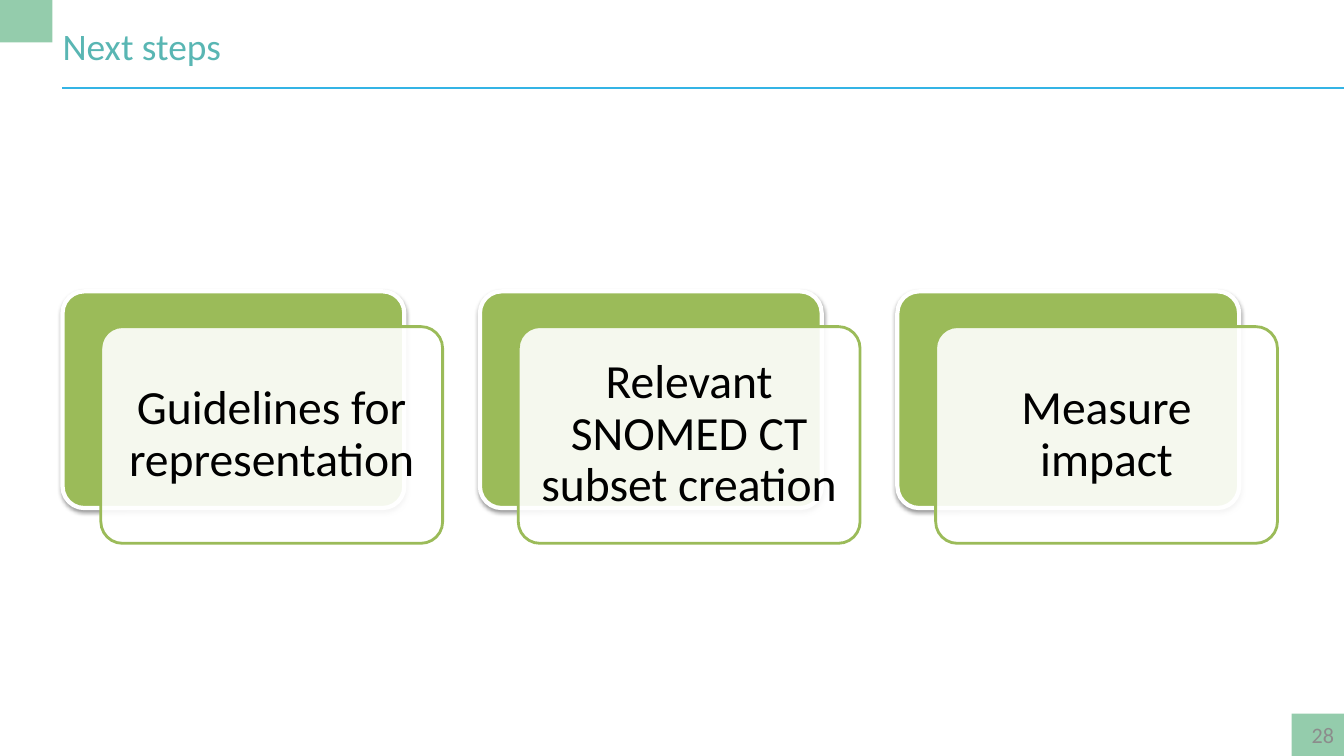
from lxml import etree
from pptx import Presentation
from pptx.dml.color import RGBColor
from pptx.enum import shapes, text
from pptx.oxml.ns import qn
from pptx.util import Inches, Pt

# Content
TITLE = "Next steps"
PAGE = "28"
STEPS = [
    "Guidelines for representation",
    "Relevant SNOMED CT subset creation",
    "Measure impact",
]
COLORS = {"mint": "94CCAC", "teal": "59B6B3", "rule": "34B4E5", "green": "9BBB59",
          "white": "FFFFFF", "black": "000000", "gray": "8C8C8C"}
FONT = "Calibri"

# Layout in inches
SLIDE_W, SLIDE_H = 13.33, 7.5
CORNER_W, CORNER_H = 0.52, 0.42
LEFT, TOP, PITCH = 0.62, 2.89, 4.14
CARD_W, CARD_H = 3.39, 2.15
SHIFT_X, SHIFT_Y = 0.38, 0.35

prs = Presentation()
prs.slide_width, prs.slide_height = Inches(SLIDE_W), Inches(SLIDE_H)
s = prs.slides.add_slide(prs.slide_layouts[5])


def color(name):
    return RGBColor.from_string(COLORS[name])


def add_box(kind, x, y, w, h, fill, line=None, width=0):
    sp = s.shapes.add_shape(kind, Inches(x), Inches(y), Inches(w), Inches(h))
    sp.fill.solid()
    sp.fill.fore_color.rgb = color(fill)
    if line:
        sp.adjustments[0] = 0.1
        sp.line.color.rgb = color(line)
        sp.line.width = Pt(width)
    else:
        sp.line.fill.background()
    sp.shadow.inherit = False
    return sp


def write(sp, words, size, ink, align, anchor, inset):
    tf = sp.text_frame
    frame = {"word_wrap": True, "auto_size": text.MSO_AUTO_SIZE.NONE, "vertical_anchor": anchor}
    for side in ("left", "right", "top", "bottom"):
        frame["margin_" + side] = Inches(inset)
    for name, value in frame.items():
        setattr(tf, name, value)
    p = tf.paragraphs[0]
    p.alignment = align
    r = p.add_run()
    r.text = words
    for name, value in {"name": FONT, "size": Pt(size), "bold": False}.items():
        setattr(r.font, name, value)
    r.font.color.rgb = color(ink)
    return p


# Corner blocks
for x, y in [(0, 0), (SLIDE_W - CORNER_W, SLIDE_H - CORNER_H)]:
    add_box(shapes.MSO_SHAPE.RECTANGLE, x, y, CORNER_W, CORNER_H, "mint")

# Title and rule
title = s.shapes.title
title.left, title.top, title.width, title.height = map(Inches, (LEFT, 0.23, 11.81, 0.45))
write(title, TITLE, 26.7, "teal", text.PP_ALIGN.LEFT, text.MSO_ANCHOR.TOP, 0)
rule = s.shapes.add_connector(shapes.MSO_CONNECTOR.STRAIGHT, Inches(LEFT), Inches(0.87),
                              Inches(SLIDE_W), Inches(0.87))
rule.line.color.rgb = color("rule")
rule.line.width = Pt(1.42)
etree.SubElement(rule._element.spPr, qn("a:effectLst"))

# Page number
number = s.shapes.add_textbox(Inches(12.5), Inches(7.09), Inches(0.83), Inches(0.4))
write(number, PAGE, 15.8, "gray", text.PP_ALIGN.RIGHT, text.MSO_ANCHOR.MIDDLE, 0.1)

# Step cards: a shadowed green back and a translucent front with the text
for i, step in enumerate(STEPS):
    x = LEFT + i * PITCH
    back = add_box(shapes.MSO_SHAPE.ROUNDED_RECTANGLE, x, TOP, CARD_W, CARD_H,
                   "green", "white", 3)
    effects = back._element.spPr.find(qn("a:effectLst"))
    shadow = etree.SubElement(effects, qn("a:outerShdw"), blurRad=str(Pt(3.1)),
                              dist=str(Pt(1.6)), dir="5400000", rotWithShape="0")
    ink = etree.SubElement(shadow, qn("a:srgbClr"), val=COLORS["black"])
    etree.SubElement(ink, qn("a:alpha"), val="38000")

    front = add_box(shapes.MSO_SHAPE.ROUNDED_RECTANGLE, x + SHIFT_X, TOP + SHIFT_Y,
                    CARD_W, CARD_H, "white", "green", 2)
    solid = front._element.spPr.find(qn("a:solidFill"))
    etree.SubElement(solid[0], qn("a:alpha"), val="90000")
    p = write(front, step, 34, "black", text.PP_ALIGN.CENTER, text.MSO_ANCHOR.MIDDLE, 0.14)
    p.line_spacing = 0.9

prs.save("out.pptx")
